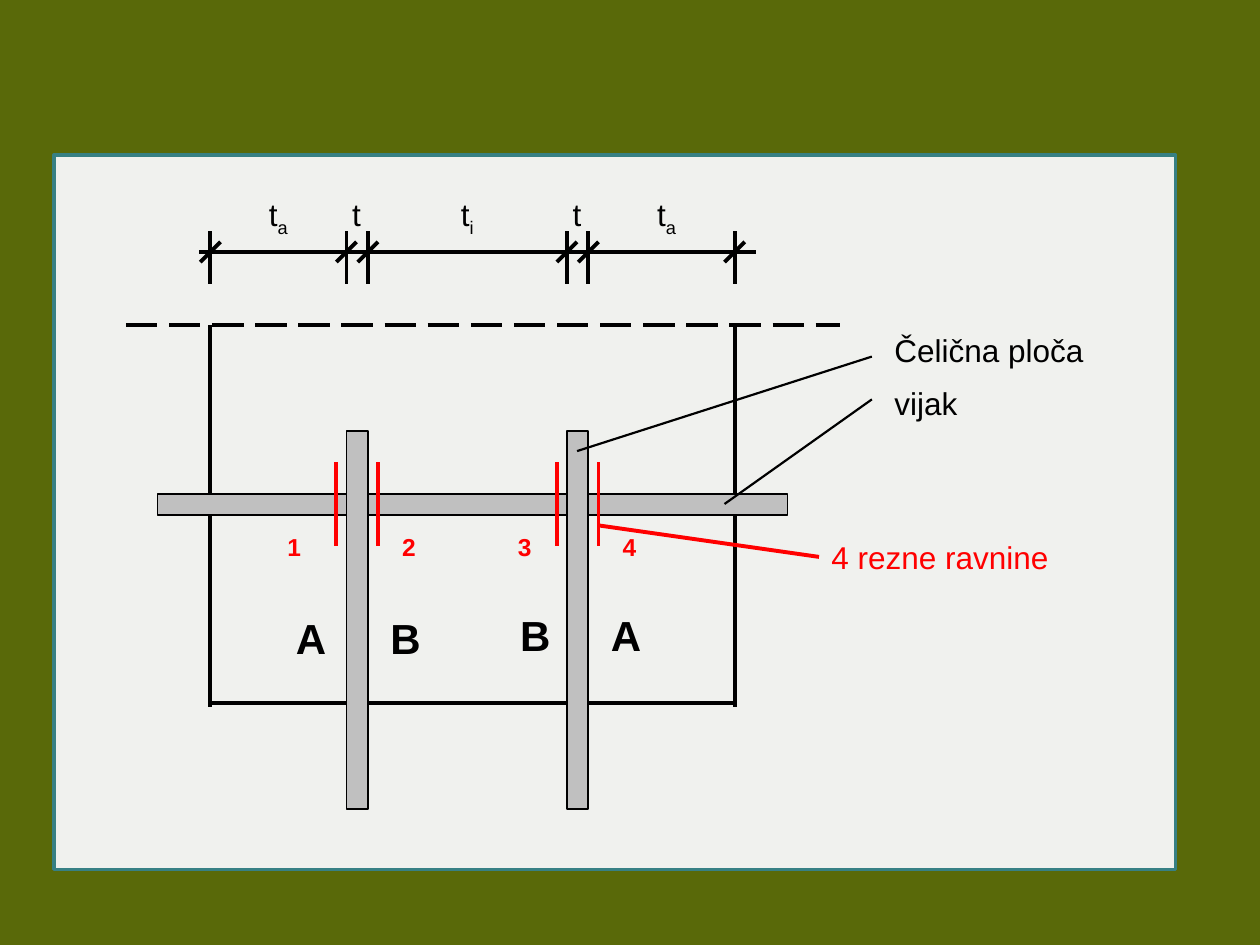
import pptx
import pptx.util
import pptx.dml.color
import pptx.enum.dml
import pptx.enum.shapes
import pptx.enum.text
import pptx.oxml.ns
from lxml import etree
from pptx.util import Inches

COLORS = {
    "background": "596909",
    "panel": "F0F1EE",
    "border": "378084",
    "ink": "000000",
    "steel": "C0C0C0",
    "shear": "FF0000",
}
PLATE_WIDTH = 0.17
PLATE_OFFSETS = (1.08, 2.83)
MEMBER_WIDTH = 4.16


def rgb(name):
    return pptx.dml.color.RGBColor.from_string(COLORS[name])


def add_rect(page, left, top, width, height, fill, line, weight):
    rect = page.shapes.add_shape(
        pptx.enum.shapes.MSO_SHAPE.RECTANGLE,
        Inches(left), Inches(top), Inches(width), Inches(height))
    rect.shadow.inherit = False
    rect.fill.solid()
    rect.fill.fore_color.rgb = rgb(fill)
    rect.line.color.rgb = rgb(line)
    rect.line.width = pptx.util.Pt(weight)
    return rect


def add_line(page, x1, y1, x2, y2, color="ink", weight=2.25):
    line = page.shapes.add_connector(
        pptx.enum.shapes.MSO_CONNECTOR.STRAIGHT,
        Inches(x1), Inches(y1), Inches(x2), Inches(y2))
    line.line.color.rgb = rgb(color)
    line.line.width = pptx.util.Pt(weight)
    etree.SubElement(line._element.spPr, pptx.oxml.ns.qn("a:effectLst"))
    return line


def add_label(page, left, top, width, height, text, size=18, color="ink",
              bold=False, centered=False, subscript=""):
    box = page.shapes.add_textbox(
        Inches(left), Inches(top), Inches(width), Inches(height))
    box.text_frame.word_wrap = True
    para = box.text_frame.paragraphs[0]
    if centered:
        para.alignment = pptx.enum.text.PP_ALIGN.CENTER
    para.font.name = "Arial"
    para.font.size = pptx.util.Pt(size)
    para.font.bold = bold
    para.font.color.rgb = rgb(color)
    para.add_run().text = text
    if subscript:
        span = para.add_run()
        span.text = subscript
        span._r.get_or_add_rPr().set("baseline", "-25000")


def draw_joint(page, left, top):
    right = left + MEMBER_WIDTH
    for x in (left, right):
        add_line(page, x, top, x, top + 3.03)
    add_line(page, left, top + 3, right, top + 3)
    add_rect(page, left - 0.42, top + 1.34, 5, PLATE_WIDTH, "steel", "ink", 1)
    for offset in PLATE_OFFSETS:
        add_rect(page, left + offset, top + 0.84, PLATE_WIDTH, 3, "steel", "ink", 1)
    edge = add_line(page, left - 0.67, top, left + 5, top)
    edge.line.dash_style = pptx.enum.dml.MSO_LINE.LONG_DASH
    for x, y, letter in ((0.58, 2.23, "A"), (1.33, 2.23, "B"),
                         (2.36, 2.21, "B"), (3.08, 2.21, "A")):
        add_label(page, left + x, top + y, 0.42, 0.5, letter, 24, bold=True)


def draw_dimensions(page, left, top):
    axis = top + 0.5
    add_line(page, left - 0.09, axis, left + 4.33, axis)
    marks = [0, MEMBER_WIDTH]
    for offset in PLATE_OFFSETS:
        marks += [offset, offset + PLATE_WIDTH]
    for mark in marks:
        x = left + mark
        add_line(page, x, axis + 0.25, x, axis - 0.17)
        add_line(page, x - 0.08, axis + 0.08, x + 0.08, axis - 0.08)
    for center, subscript in ((0.54, "a"), (1.16, ""), (2.04, "i"),
                              (2.91, ""), (3.62, "a")):
        add_label(page, left + center - 0.25, top, 0.5, 0.4, "t",
                  centered=True, subscript=subscript)


def draw_callouts(page, left, top):
    for text, y, tip_x, tip_y in (("vijak", 0.42, 5.75, 1.42),
                                  ("Čelična ploča", 0, 4.58, 1)):
        add_line(page, tip_x, top + tip_y, left - 0.08, top + y + 0.17 + 0.08 * (y == 0),
                 weight=1.25)
        add_label(page, left, top + y, 2.5, 0.41, text)


def draw_shear_planes(page, left, top):
    planes = [offset + side for offset in PLATE_OFFSETS
              for side in (-0.08, PLATE_WIDTH + 0.08)]
    for plane in planes:
        x = left + plane
        add_line(page, x, top, x, top + 0.66, "shear")
    add_line(page, left + planes[-1], top + 0.5, left + 4.83, top + 0.75, "shear")
    for number, x in enumerate((0.5, 1.41, 2.33, 3.16), 1):
        add_label(page, left + x, top + 0.5, 0.33, 0.33, str(number), 14,
                  "shear", True, True)
    add_label(page, left + 4.83, top + 0.55, 2.5, 0.41, "4 rezne ravnine",
              color="shear")


def main():
    deck = pptx.Presentation()
    deck.slide_width = Inches(10)
    deck.slide_height = Inches(7.5)
    page = deck.slides.add_slide(deck.slide_layouts[6])
    page.background.fill.solid()
    page.background.fill.fore_color.rgb = rgb("background")
    add_rect(page, 0.43, 1.23, 8.9, 5.67, "panel", "border", 2)
    draw_joint(page, 1.67, 2.58)
    draw_dimensions(page, 1.67, 1.5)
    draw_callouts(page, 7, 2.58)
    draw_shear_planes(page, 1.67, 3.67)
    deck.save("out.pptx")


if __name__ == "__main__":
    main()
